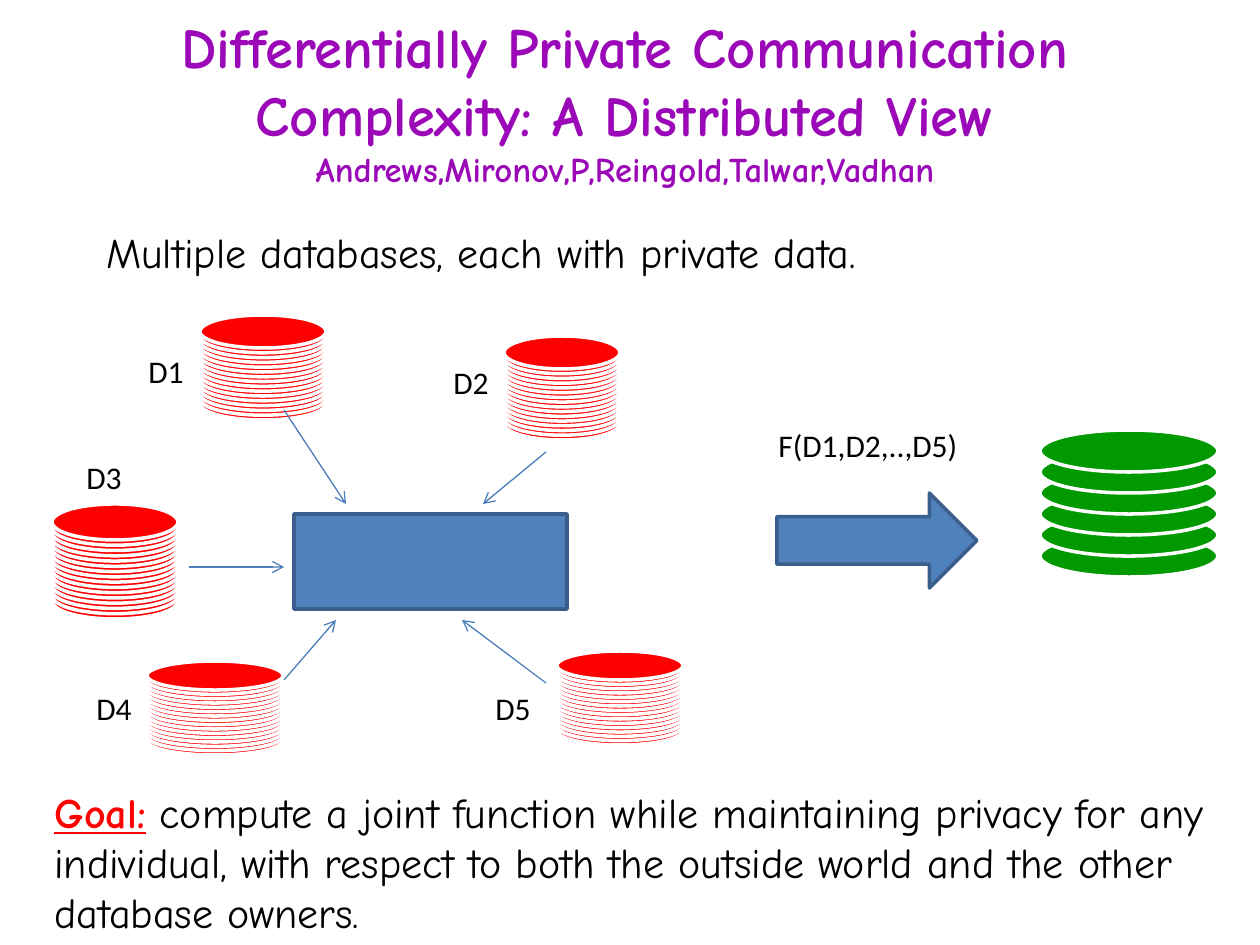
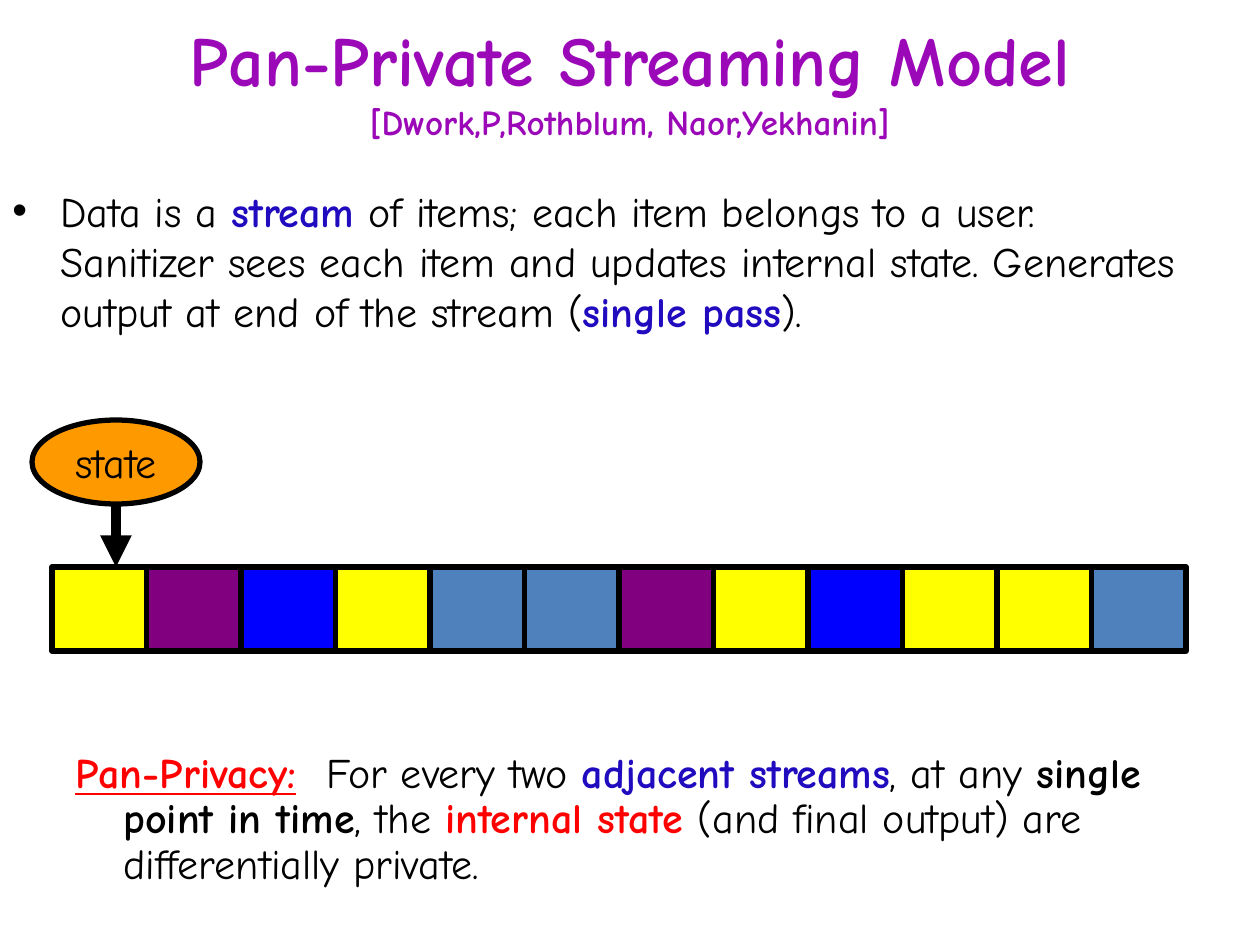
from pptx import Presentation
from pptx.dml.color import RGBColor
from pptx.enum.shapes import MSO_CONNECTOR, MSO_SHAPE
from pptx.enum.text import MSO_ANCHOR, MSO_AUTO_SIZE, PP_ALIGN
from pptx.oxml.ns import qn
from pptx.util import Emu, Pt
from lxml import etree

EMU_PER_PX = 914400 / 126
SLIDE_W, SLIDE_H = 1260, 945

PURPLE = RGBColor(0x9B, 0x08, 0xB8)
RED = RGBColor(0xFF, 0x00, 0x00)
GREEN = RGBColor(0x00, 0x99, 0x00)
INK_BLUE = RGBColor(0x20, 0x0B, 0xBF)
STEEL = RGBColor(0x4F, 0x81, 0xBD)
STEEL_EDGE = RGBColor(0x3A, 0x5F, 0x8C)
STEEL_LINE = RGBColor(0x4B, 0x7E, 0xBC)
YELLOW = RGBColor(0xFF, 0xFF, 0x00)
VIOLET = RGBColor(0x80, 0x00, 0x80)
BLUE = RGBColor(0x00, 0x00, 0xFF)
ORANGE = RGBColor(0xFF, 0x99, 0x00)
BLACK = RGBColor(0x00, 0x00, 0x00)
WHITE = RGBColor(0xFF, 0xFF, 0xFF)

RECT, ELLIPSE = MSO_SHAPE.RECTANGLE, MSO_SHAPE.OVAL
RIGHT_ARROW = MSO_SHAPE.RIGHT_ARROW
STRAIGHT = MSO_CONNECTOR.STRAIGHT
TOP, MIDDLE = MSO_ANCHOR.TOP, MSO_ANCHOR.MIDDLE
LEFT, CENTER = PP_ALIGN.LEFT, PP_ALIGN.CENTER
FIT_SHAPE = MSO_AUTO_SIZE.SHAPE_TO_FIT_TEXT

HAND, PLAIN = "Comic Neue", "Calibri"
BODY = {"name": HAND, "size": Pt(24), "bold": False, "color": BLACK}
LABEL = {"name": PLAIN, "size": Pt(18), "color": BLACK}
TITLE = {"name": HAND, "bold": True, "color": PURPLE}
KEYWORD = {"color": INK_BLUE, "bold": True}
LEAD = {"color": RED, "bold": True, "underline": True}
HANGING = 48
DATABASE_DISCS = 16


def px(length):
    return Emu(round(length * EMU_PER_PX))


def box_px(box):
    return [px(length) for length in box]


# Shared parts
def write(paragraph, runs, base):
    """Add (text, format) runs; a text of "\\n" is a line break."""
    for text, extra in runs:
        if text == "\n":
            paragraph.add_line_break()
            continue
        run = paragraph.add_run()
        run.text = text
        for key, value in {**base, **extra}.items():
            if key == "color":
                run.font.color.rgb = value
            elif key == "spacing":
                run.font._element.set("spc", str(value))
            else:
                setattr(run.font, key, value)


def add_text(slide, box, runs, base, wrap=True, anchor=TOP, align=LEFT):
    frame = slide.shapes.add_textbox(*box_px(box)).text_frame
    frame.word_wrap = wrap
    frame.vertical_anchor = anchor
    if not wrap:
        frame.auto_size = FIT_SHAPE
    frame.paragraphs[0].alignment = align
    write(frame.paragraphs[0], runs, base)
    return frame


def add_title(slide, box, headline, authors, sizes):
    headline_size, authors_size = sizes
    return add_text(slide, box,
                    [(headline, {"size": Pt(headline_size)}), ("\n", {}),
                     (authors, {"size": Pt(authors_size)})],
                    TITLE, anchor=MIDDLE, align=CENTER)


def add_figure(shapes, kind, box, fill, edge, width):
    figure = shapes.add_shape(kind, *box_px(box))
    figure.shadow.inherit = False
    figure.fill.solid()
    figure.fill.fore_color.rgb = fill
    figure.line.color.rgb = edge
    figure.line.width = Pt(width)
    return figure


def add_arrow(shapes, start, end, color, width, head):
    arrow = shapes.add_connector(STRAIGHT, *box_px(start + end))
    arrow.line.color.rgb = color
    arrow.line.width = Pt(width)
    etree.SubElement(arrow.line._get_or_add_ln(), qn("a:tailEnd"), type=head)
    etree.SubElement(arrow._element.spPr, qn("a:effectLst"))


def hang(paragraph, bullet=None):
    properties = paragraph._p.get_or_add_pPr()
    properties.set("marL", str(px(HANGING)))
    properties.set("indent", str(-px(HANGING)))
    if bullet:
        etree.SubElement(properties, qn("a:buFont"), typeface="Arial")
        etree.SubElement(properties, qn("a:buChar"), char=bullet)


# Slide 1: distributed databases
def add_disc_stack(slide, box, disc_height, count, color):
    """Stack discs evenly from the bottom of the box to its top."""
    left, top, width, height = box
    step = (height - disc_height) / (count - 1)
    stack = slide.shapes.add_group_shape()
    for level in reversed(range(count)):
        add_figure(stack.shapes, ELLIPSE,
                   (left, top + level * step, width, disc_height),
                   color, WHITE, 2)


def add_databases(slide):
    # name, label corner, stack box, disc height, arrow start, arrow end
    databases = [
        ("D1", (136, 346), (200, 315, 126, 105), 33, (284, 410), (346, 504)),
        ("D4", (84, 683), (147, 661, 136, 94), 29, (284, 680), (336, 620)),
        ("D3", (74, 452), (52, 504, 126, 115), 36, (189, 567), (284, 567)),
        ("D2", (441, 357), (504, 336, 116, 104), 33, (546, 452), (483, 504)),
        ("D5", (483, 683), (557, 651, 126, 94), 29, (546, 683), (462, 620)),
    ]
    for name, corner, stack_box, disc_height, start, end in databases:
        add_disc_stack(slide, stack_box, disc_height, DATABASE_DISCS, RED)
        add_arrow(slide.shapes, start, end, STEEL_LINE, 0.75, "arrow")
        add_text(slide, corner + (62, 50), [(name, {})], LABEL, wrap=False)


def add_joint_output(slide, box):
    left, top, width, height = box
    add_text(slide, (left, top - 10, 207, 50), [("F(D1,D2,..,D5)", {})],
             LABEL, wrap=False)
    add_figure(slide.shapes, RIGHT_ARROW, (left + 11, top + 63, 200, 95),
               STEEL, STEEL_EDGE, 2)
    add_disc_stack(slide, (left + width - 178, top, 178, height), 42, 6, GREEN)


def build_distributed_slide(slide):
    title = add_title(
        slide, (63, 42, 1124, 168),
        "Differentially Private Communication Complexity: A Distributed View",
        "Andrews,Mironov,P,Reingold,Talwar,Vadhan", (32.4, 19.8))
    title.margin_bottom = px(57)  # lifts the three lines above the middle

    add_text(slide, (94, 220, 1071, 63),
             [("Multiple databases, each with private data.", {})], BODY)
    add_databases(slide)
    add_figure(slide.shapes, RECT, (294, 514, 273, 95), STEEL, STEEL_EDGE, 2)
    add_joint_output(slide, (766, 430, 452, 147))

    add_text(slide, (42, 780, 1218, 165),
             [("Goal:", LEAD),
              (" compute a joint function while maintaining privacy for any "
               "individual, with respect to both the outside world and the "
               "other database owners.", {})], BODY)


# Slide 2: streaming model
def add_stream(slide, box):
    left, top, width, height = box
    items = [YELLOW, VIOLET, BLUE, YELLOW, STEEL, STEEL,
             VIOLET, YELLOW, BLUE, YELLOW, YELLOW, STEEL]
    item_width = width / len(items)
    for index, color in enumerate(items):
        add_figure(slide.shapes, RECT,
                   (left + index * item_width, top, item_width, height),
                   color, BLACK, 3)


def add_state(slide, box, stream_top):
    left, top, width, height = box
    marker = slide.shapes.add_group_shape()
    state = add_figure(marker.shapes, ELLIPSE, box, ORANGE, BLACK, 3)
    frame = state.text_frame
    frame.word_wrap = False
    frame.vertical_anchor = MIDDLE
    frame.paragraphs[0].alignment = CENTER
    write(frame.paragraphs[0], [("state", {})], BODY)
    middle = left + width / 2
    add_arrow(marker.shapes, (middle, top + height), (middle, stream_top),
              BLACK, 6, "triangle")


def build_streaming_slide(slide):
    add_title(slide, (63, 0, 1134, 158), "Pan-Private Streaming Model",
              "[Dwork,P,Rothblum, Naor,Yekhanin]", (40, 20))

    model = add_text(slide, (0, 179, 1197, 180), [], BODY)
    hang(model.paragraphs[0], "•")
    write(model.paragraphs[0],
          [("Data is a ", {}), ("stream", KEYWORD),
           (" of items; each item belongs to a user. Sanitizer sees each item "
            "and updates internal state. Generates output at end of the "
            "stream (", {}),
           ("single pass", KEYWORD), (").", {})], BODY)

    stream_top = 567
    add_stream(slide, (52, stream_top, 1134, 84))
    add_state(slide, (32, 420, 168, 84), stream_top)

    privacy = add_text(slide, (63, 746, 1134, 199), [], BODY)
    hang(privacy.paragraphs[0])
    privacy.paragraphs[0].line_spacing = 0.9
    write(privacy.paragraphs[0],
          [("Pan-Privacy:", LEAD), (" ", {"spacing": 900}),
           ("For every two ", {}), ("adjacent streams", KEYWORD),
           (", at any ", {}), ("single point in time", {"bold": True}),
           (", the ", {}), ("internal state ", {"color": RED, "bold": True}),
           ("(and final output) are differentially private.", {})], BODY)


def main():
    deck = Presentation()
    deck.slide_width, deck.slide_height = px(SLIDE_W), px(SLIDE_H)
    blank = deck.slide_layouts[6]
    for build in (build_distributed_slide, build_streaming_slide):
        build(deck.slides.add_slide(blank))
    deck.save("out.pptx")


if __name__ == "__main__":
    main()
